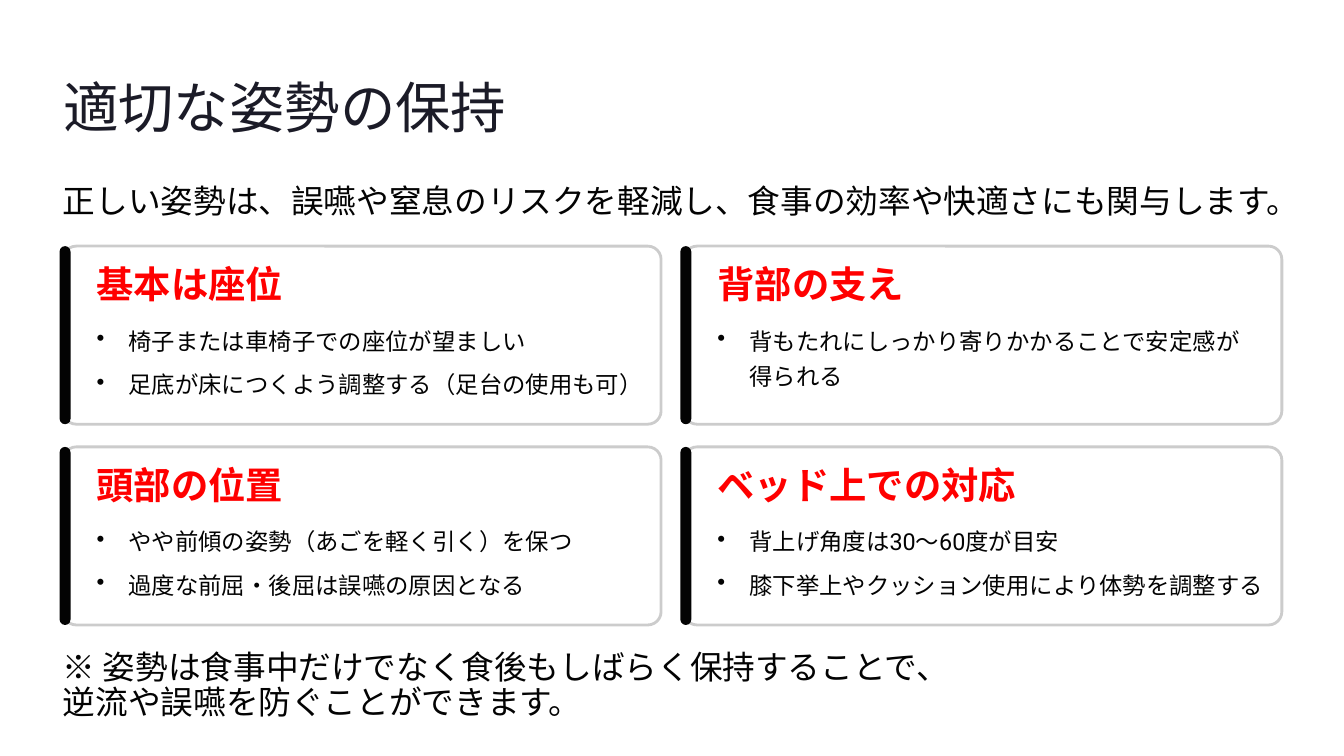
"""Build the slide on keeping a proper eating posture."""
from lxml import etree
from pptx import Presentation, util as u
from pptx.dml.color import RGBColor
from pptx.enum import shapes, text
from pptx.oxml.ns import qn

TITLE = "適切な姿勢の保持"
LEAD = "正しい姿勢は、誤嚥や窒息のリスクを軽減し、食事の効率や快適さにも関与します。"
CARDS = [
    ("基本は座位", ["椅子または車椅子での座位が望ましい",
               "足底が床につくよう調整する（足台の使用も可）"]),
    ("背部の支え", ["背もたれにしっかり寄りかかることで安定感が得られる"]),
    ("頭部の位置", ["やや前傾の姿勢（あごを軽く引く）を保つ",
               "過度な前屈・後屈は誤嚥の原因となる"]),
    ("ベッド上での対応", ["背上げ角度は30～60度が目安",
                  "膝下挙上やクッション使用により体勢を調整する"]),
]
NOTE = "※ 姿勢は食事中だけでなく食後もしばらく保持することで、\n逆流や誤嚥を防ぐことができます。"

INK, RED, GREY, WHITE, NAVY = "030303", "FF0000", "CCCCCC", "FFFFFF", "1B1B27"
WIDE, HIGH = 16, 9
EDGE, TOP = 0.75, 2.93
CARD_W, CARD_H, GAP = 7.12, 2.12, 0.27
BAR_W, PAD, STEP = 0.13, 0.4, 0.52
LIMIT = 23


def color(hue):
    return RGBColor.from_string(hue)


def write(box, words, size, font, hue, line, bold=False, wrap=False):
    frame = box.text_frame
    frame.text = words
    frame.margin_left = frame.margin_right = 0
    frame.margin_top = frame.margin_bottom = 0
    frame.vertical_anchor = text.MSO_ANCHOR.TOP
    frame.auto_size = text.MSO_AUTO_SIZE.NONE
    frame.word_wrap = wrap
    for para in frame.paragraphs:
        para.alignment = text.PP_ALIGN.LEFT
        para.line_spacing = u.Pt(line)
        para.space_before = u.Pt(0)
        for run in para.runs:
            run.font.size, run.font.name = u.Pt(size), font
            run.font.bold = bold
            run.font.color.rgb = color(hue)


def label(slide, x, y, w, h, *style, **more):
    box = slide.shapes.add_textbox(*map(u.Inches, (x, y, w, h)))
    write(box, *style, **more)
    return box


def bullet(para):
    props = para._p.get_or_add_pPr()
    props.set("marL", str(u.Inches(0.38)))
    props.set("indent", str(-u.Inches(0.38)))
    etree.SubElement(props, qn("a:buChar")).set("char", "•")


def panel(slide, x, y, w, h, round_by, hue):
    shape = slide.shapes.add_shape(
        shapes.MSO_SHAPE.ROUNDED_RECTANGLE, *map(u.Inches, (x, y, w, h)))
    shape.adjustments[0] = round_by
    shape.shadow.inherit = False
    shape.fill.solid()
    shape.fill.fore_color.rgb = color(hue)
    shape.line.fill.background()
    return shape


def card(slide, x, y, head, points):
    back = panel(slide, x, y, CARD_W, CARD_H, 0.075, WHITE)
    back.line.color.rgb = color(GREY)
    back.line.width = u.Pt(2.4)
    tint = back.fill._xPr.find(qn("a:solidFill"))[0]
    etree.SubElement(tint, qn("a:alpha")).set("val", "95000")
    panel(slide, x - 0.04, y, BAR_W, CARD_H, 0.5, INK)
    label(slide, x + PAD, y + 0.3, 3.33, 0.42,
          head, 32, "Inter", RED, 29.5, bold=True)
    for row, point in enumerate(points):
        long = len(point) > LIMIT
        box = label(slide, x + PAD, y + 0.87 + row * STEP, 6.42,
                    0.85 if long else 0.43,
                    point, 20, "Roboto", INK, 30.5, wrap=long)
        bullet(box.text_frame.paragraphs[0])


def main():
    deck = Presentation()
    deck.slide_width, deck.slide_height = u.Inches(WIDE), u.Inches(HIGH)
    slide = deck.slides.add_slide(deck.slide_layouts[5])
    title = slide.shapes.title
    title.left, title.top = u.Inches(EDGE), u.Inches(0.84)
    title.width, title.height = u.Inches(6.66), u.Inches(0.83)
    write(title, TITLE, 47.5, "Inter", NAVY, 59.5)
    span = WIDE - 2 * EDGE
    label(slide, EDGE, 2.2, span, 0.43, LEAD, 28, "Roboto", INK, 30.5)
    for i, (head, points) in enumerate(CARDS):
        row, col = divmod(i, 2)
        card(slide, EDGE + col * (CARD_W + GAP), TOP + row * (CARD_H + GAP),
             head, points)
    label(slide, EDGE, 7.74, span, 0.43, NOTE, 28, "Roboto", INK, 30.5)
    deck.save("out.pptx")


if __name__ == "__main__":
    main()
